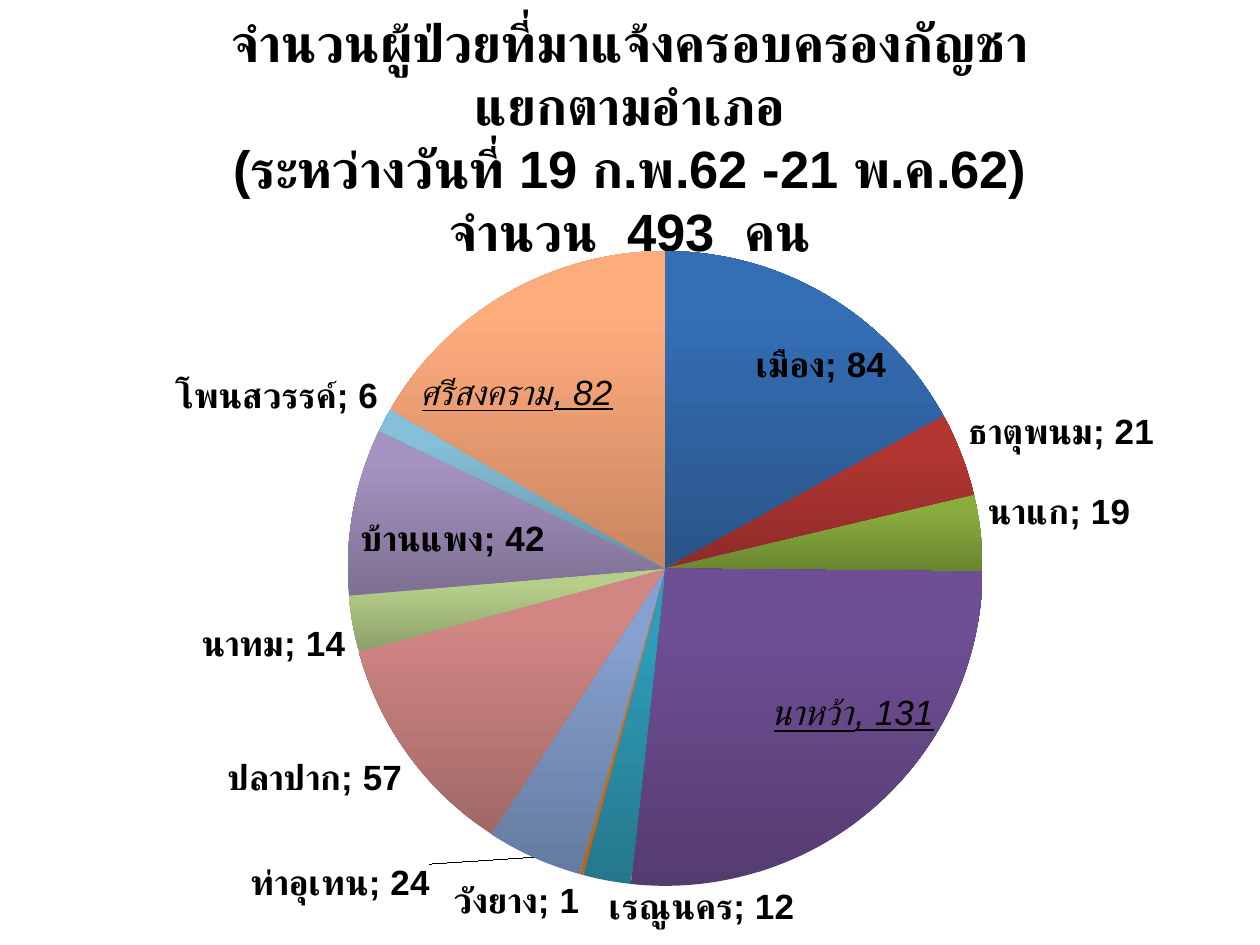
import pptx
import pptx.util
import pptx.chart.data
import pptx.dml.color
import pptx.enum.chart
import pptx.enum.text
import pptx.oxml
import pptx.oxml.ns

Cm, Pt = pptx.util.Cm, pptx.util.Pt
Place = pptx.enum.chart.XL_LABEL_POSITION
OUT, IN = Place.OUTSIDE_END, Place.INSIDE_END
qn = pptx.oxml.ns.qn

HUES = {
    "text": "000000",
    "blue": ("2A5488", "346EB5"),
    "red": ("8C2B28", "B43632"),
    "green": ("6A8530", "8AAC3F"),
    "purple": ("553C70", "6E4E94"),
    "teal": ("25788C", "2E9DBA"),
    "orange": ("B5651D", "E57A22"),
    "sky": ("647CA0", "86A1D0"),
    "pink": ("A06866", "D28684"),
    "lime": ("8C9F6B", "B5CF8A"),
    "lilac": ("7E7093", "A592C0"),
    "aqua": ("6493A4", "85C0D8"),
    "peach": ("C88560", "FFAC7D"),
}

# district, patients, hue, label place, label shift, own label text
SLICES = [
    ("เมือง", 84, "blue", IN, (0.05, 0.06), None),
    ("ธาตุพนม", 21, "red", OUT, None, None),
    ("นาแก", 19, "green", OUT, None, None),
    ("นาหว้า", 131, "purple", IN, (0.05, -0.09), "นาหว้า, 131"),
    ("เรณูนคร", 12, "teal", OUT, (0.15, 0), None),
    ("วังยาง", 1, "orange", OUT, None, None),
    ("ท่าอุเทน", 24, "sky", OUT, (-0.08, 0), None),
    ("ปลาปาก", 57, "pink", OUT, None, None),
    ("นาทม", 14, "lime", OUT, None, None),
    ("บ้านแพง", 42, "lilac", IN, (0, 0.01), None),
    ("โพนสวรรค์", 6, "aqua", OUT, None, None),
    ("ศรีสงคราม", 82, "peach", IN, (-0.07, 0.1), "ศรีสงคราม, 82"),
]


def shade(code):
    return pptx.dml.color.RGBColor.from_string(code)


def layout(inner=False, **parts):
    """Manual chart layout, in fractions of the chart area."""
    tags = '<c:layoutTarget val="inner"/>' if inner else ""
    if inner:
        tags += '<c:xMode val="edge"/><c:yMode val="edge"/>'
    tags += "".join(f'<c:{key} val="{val}"/>' for key, val in parts.items())
    return pptx.oxml.parse_xml(
        f"<c:layout {pptx.oxml.ns.nsdecls('c')}>"
        f"<c:manualLayout>{tags}</c:manualLayout></c:layout>")


class Deck:
    font, size = "Arial", 20

    def __init__(self, wide, high):
        self.show = pptx.Presentation()
        self.show.slide_width, self.show.slide_height = Cm(wide), Cm(high)
        self.slide = self.show.slides.add_slide(self.show.slide_layouts[6])

    def style(self, font, size, bold=True):
        font.name, font.size, font.bold = self.font, Pt(size), bold
        font.color.rgb = shade(HUES["text"])

    def title(self, text, box):
        frame = self.slide.shapes.add_textbox(*map(Cm, box)).text_frame
        frame.word_wrap = True
        frame.vertical_anchor = pptx.enum.text.MSO_ANCHOR.MIDDLE
        para = frame.paragraphs[0]
        para.text = text
        para.alignment = pptx.enum.text.PP_ALIGN.CENTER
        self.style(para.font, 30)

    def pie(self, rows, box):
        data = pptx.chart.data.CategoryChartData()
        data.categories = [row[0] for row in rows]
        data.add_series("Series 1", [row[1] for row in rows])
        chart = self.slide.shapes.add_chart(
            pptx.enum.chart.XL_CHART_TYPE.PIE, *map(Cm, box), data).chart
        chart.has_legend = chart.has_title = False
        chart.font.name, chart.font.size = "Calibri", Pt(18)
        chart.font.color.rgb = shade(HUES["text"])
        plot = chart.plots[0]
        plot.vary_by_categories = True
        area = chart._chartSpace.chart.plotArea
        for old in area.findall(qn("c:layout")):
            area.remove(old)
        area.insert(0, layout(True, x=0.26, y=0.06, w=0.51, h=0.86))
        series = plot.series[0]
        labels = series.data_labels
        labels.show_value = labels.show_category_name = True
        self.style(labels.font, self.size)
        for spot, (_, _, hue, place, shift, text) in enumerate(rows):
            point = series.points[spot]
            self.blend(point.format.fill, HUES[hue])
            self.label(point.data_label, place, shift, text)

    def blend(self, fill, pair):
        """Fade from the dark hue at the bottom to the light one near the top."""
        fill.gradient()
        fill.gradient_angle = 90
        for stop, code, spot in zip(fill.gradient_stops, pair, (0, 0.8)):
            stop.color.rgb = shade(code)
            stop.position = spot

    def label(self, label, place, shift, text):
        if text:
            run = label.text_frame.paragraphs[0].add_run()
            run.text = text
            self.style(run.font, self.size, bold=False)
            run.font.italic = run.font.underline = True
        else:
            self.style(label.font, self.size)
        label.position = place
        node = label._get_or_add_dLbl()
        node.find(qn("c:showCatName")).set("val", "1")
        mark = pptx.oxml.parse_xml(
            f"<c:separator {pptx.oxml.ns.nsdecls('c')}>; </c:separator>")
        flags = [kid for kid in node if kid.tag.split("}")[1].startswith("show")]
        flags[-1].addnext(mark)
        if shift:
            for old in node.findall(qn("c:layout")):
                node.remove(old)
            node.find(qn("c:idx")).addnext(layout(x=shift[0], y=shift[1]))


def main():
    deck = Deck(25.4, 19.05)
    deck.title("จำนวนผู้ป่วยที่มาแจ้งครอบครองกัญชา แยกตามอำเภอ\v"
               "(ระหว่างวันที่ 19 ก.พ.62 -21 พ.ค.62)\v"
               "จำนวน  493  คน", (3.4, 1.12, 18.6, 3.25))
    deck.pie(SLICES, (0.33, 4.17, 25.4, 14.88))
    deck.show.save("out.pptx")


if __name__ == "__main__":
    main()
